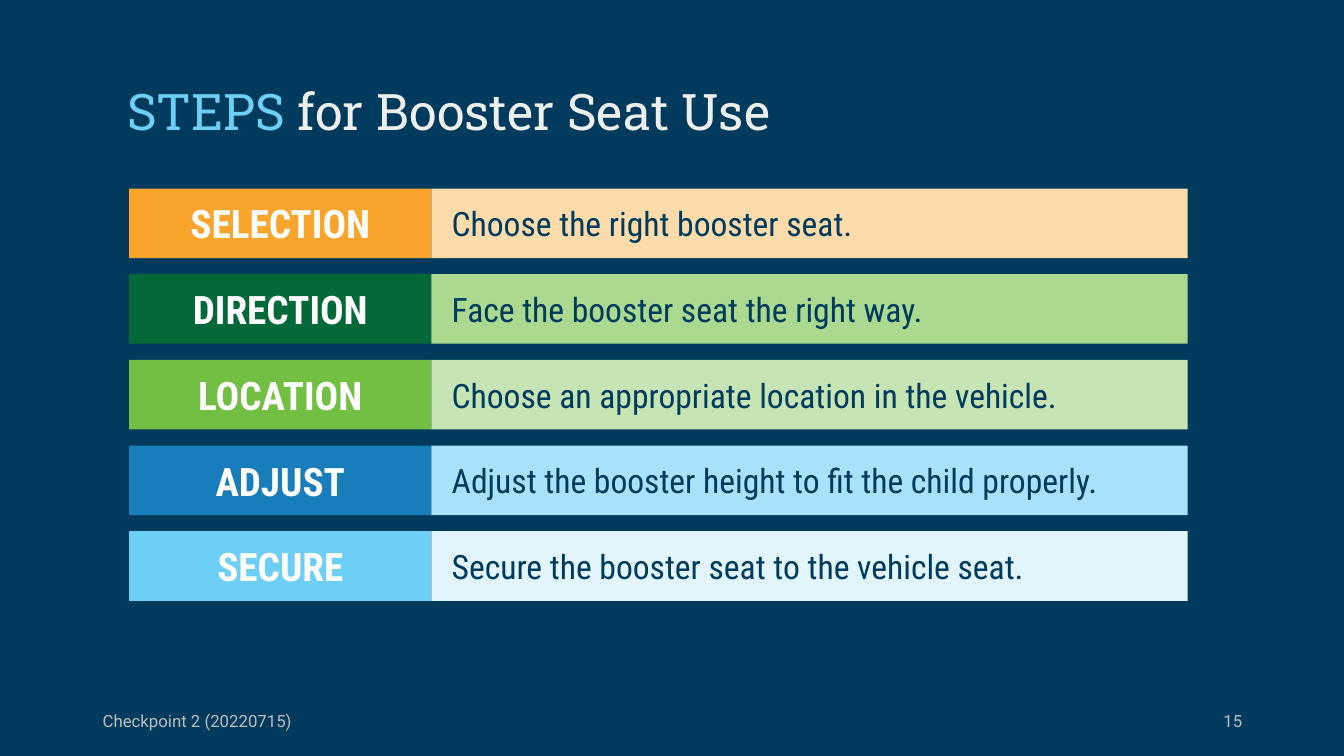
from pptx import Presentation
from pptx.dml.color import RGBColor
from pptx.enum.shapes import MSO_SHAPE
from pptx.enum.text import MSO_ANCHOR, MSO_AUTO_SIZE, PP_ALIGN
from pptx.util import Inches, Pt

RECTANGLE = MSO_SHAPE.RECTANGLE
TOP, MIDDLE = MSO_ANCHOR.TOP, MSO_ANCHOR.MIDDLE
LEFT, CENTER, RIGHT = PP_ALIGN.LEFT, PP_ALIGN.CENTER, PP_ALIGN.RIGHT
NO_FIT = MSO_AUTO_SIZE.NONE

COLORS = {
    "navy": "003A5C", "white": "FFFFFF", "off_white": "EDEFEC",
    "gray": "BEBEBD", "sky": "6DCFF6", "pale_sky": "E2F5FD",
    "orange": "F9A52B", "peach": "FDDBAA", "forest": "046938",
    "leaf": "AAD98F", "green": "72BF44", "mint": "C7E5B4",
    "blue": "177DBB", "light_blue": "A7E2FA",
}
TITLE_FONT = {"name": "Roboto Slab", "size": Pt(36), "bold": False}
STEP_FONT = {"name": "Roboto Condensed", "size": Pt(28), "bold": True}
DETAIL_FONT = {"name": "Roboto Condensed", "size": Pt(24), "bold": False}
FOOTER_FONT = {"name": "Roboto", "size": Pt(12), "bold": False}

STEPS = [
    ("SELECTION", "orange", "Choose the right booster seat.", "peach"),
    ("DIRECTION", "forest", "Face the booster seat the right way.", "leaf"),
    ("LOCATION", "green", "Choose an appropriate location in the vehicle.", "mint"),
    ("ADJUST", "blue", "Adjust the booster height to fit the child properly.", "light_blue"),
    ("SECURE", "sky", "Secure the booster seat to the vehicle seat.", "pale_sky"),
]


def color(name):
    """Return the named colour."""
    return RGBColor.from_string(COLORS[name])


def write(box, spans, font, align=LEFT, anchor=MIDDLE, inset=0.1):
    """Write coloured spans as the one paragraph of a box."""
    frame = box.text_frame
    settings = {
        "word_wrap": True, "auto_size": NO_FIT, "vertical_anchor": anchor,
        "margin_left": Inches(inset), "margin_right": Inches(0.1),
        "margin_top": Inches(0.05), "margin_bottom": Inches(0.05),
    }
    for key, value in settings.items():
        setattr(frame, key, value)
    para = frame.paragraphs[0]
    para.alignment = align
    for text, color_name in spans:
        span = para.add_run()
        span.text = text
        for key, value in font.items():
            setattr(span.font, key, value)
        span.font.color.rgb = color(color_name)
    return para


def add_title(page, left, top, width, height):
    """Place the two-colour title."""
    title = page.shapes.title
    place = {"left": left, "top": top, "width": width, "height": height}
    for key, value in place.items():
        setattr(title, key, Inches(value))
    spans = [("STEPS", "sky"), (" for Booster Seat Use", "off_white")]
    para = write(title, spans, TITLE_FONT, anchor=TOP)
    para.line_spacing = 0.9


def add_bar(page, left, top, width, height, fill):
    """Add a plain filled rectangle."""
    bar = page.shapes.add_shape(
        RECTANGLE, Inches(left), Inches(top), Inches(width), Inches(height))
    bar.shadow.inherit = False
    bar.fill.solid()
    bar.fill.fore_color.rgb = color(fill)
    bar.line.fill.background()
    return bar


def add_steps(page, left, top, width, height):
    """Stack one row per step, a label beside its detail."""
    label_width, row_height = 3, 0.69
    pitch = (height - row_height) / (len(STEPS) - 1)
    for index, (label, label_fill, detail, detail_fill) in enumerate(STEPS):
        row_top = top + index * pitch
        bar = add_bar(page, left, row_top, label_width, row_height, label_fill)
        write(bar, [(label, "white")], STEP_FONT, CENTER)
        bar = add_bar(page, left + label_width, row_top,
                      width - label_width, row_height, detail_fill)
        write(bar, [(detail, "navy")], DETAIL_FONT, inset=0.2)


def add_footer(page, left, top, width, height):
    """Put the course name and page number at the two ends."""
    part_width = 3
    parts = [("Checkpoint 2 (20220715)", left, LEFT),
             ("15", left + width - part_width, RIGHT)]
    for text, part_left, align in parts:
        box = page.shapes.add_textbox(
            Inches(part_left), Inches(top), Inches(part_width), Inches(height))
        write(box, [(text, "gray")], FOOTER_FONT, align)


def main():
    """Build and save the deck."""
    deck = Presentation()
    deck.slide_width, deck.slide_height = Inches(13.33), Inches(7.5)
    page = deck.slides.add_slide(deck.slide_layouts.get_by_name("Title Only"))
    page.background.fill.solid()
    page.background.fill.fore_color.rgb = color("navy")
    add_title(page, 1.16, 0.81, 9.73, 0.59)
    add_steps(page, 1.28, 1.87, 10.5, 4.09)
    add_footer(page, 0.92, 6.95, 11.5, 0.4)
    deck.save("out.pptx")


if __name__ == "__main__":
    main()
